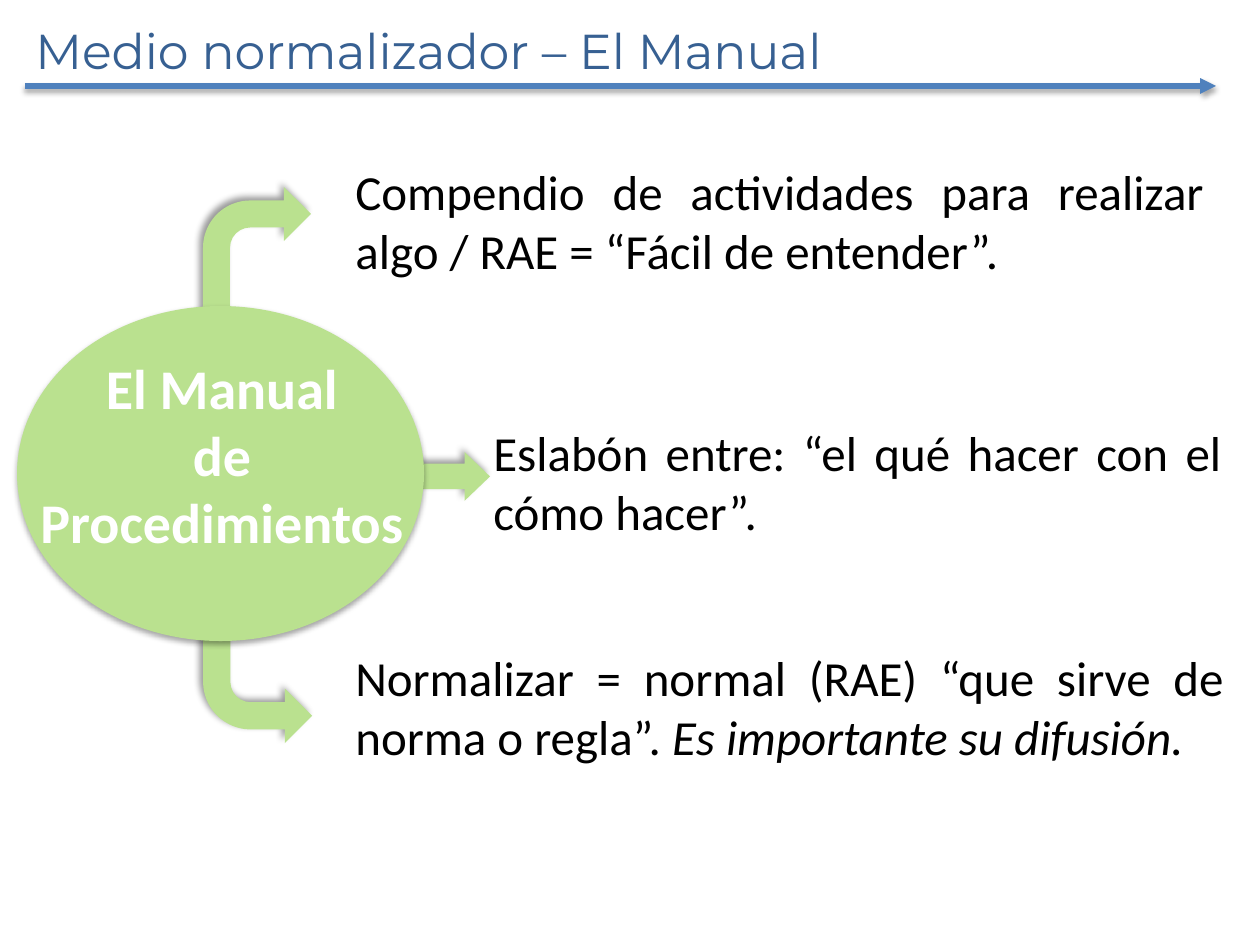
from dataclasses import dataclass

from lxml import etree
from pptx import Presentation
from pptx import util as u
from pptx.dml.color import RGBColor
from pptx.enum import shapes, text
from pptx.oxml import ns

SCALE = 914400 / 126


@dataclass(frozen=True)
class Theme:
    """Colours, fonts, type sizes and shadows of the slide."""
    green: str = "BAE18F"
    blue: str = "4F81BD"
    navy: str = "376092"
    black: str = "000000"
    white: str = "FFFFFF"
    body_font: str = "Calibri"
    title_font: str = "Montserrat"
    body_size: int = 28
    hub_size: int = 32
    arrow_shadow: tuple = (40, 4, 3, 225)
    soft_shadow: tuple = (35, 3.1, 1.8, 90)


THEME = Theme()


def px(n):
    """Turn pixels into EMU."""
    return u.Emu(round(n * SCALE))


def rgb(colour):
    """Turn a hex string into a colour."""
    return RGBColor.from_string(colour)


def add_sub(parent, tag, **attrs):
    """Append a DrawingML element with attributes."""
    values = {name: str(value) for name, value in attrs.items()}
    return etree.SubElement(parent, ns.qn(tag), values)


def set_shadow(sp, shadow):
    """Give a shape an outer shadow of opacity, blur, distance and angle."""
    opacity, blur, dist, angle = shadow
    effects = add_sub(sp._element.spPr, "a:effectLst")
    outer = add_sub(effects, "a:outerShdw", blurRad=u.Pt(blur), dist=u.Pt(dist),
                    dir=angle * 60000, rotWithShape=0)
    colour = add_sub(outer, "a:srgbClr", val=THEME.black)
    add_sub(colour, "a:alpha", val=opacity * 1000)


def add_green_shape(s, kind, box, shadow):
    """Add a borderless green shape with a shadow."""
    sp = s.shapes.add_shape(kind, *map(px, box))
    sp.fill.solid()
    sp.fill.fore_color.rgb = rgb(THEME.green)
    sp.line.fill.background()
    set_shadow(sp, shadow)
    return sp


def add_bent_arrow(s, box, adjustments=(), downward=False):
    """Add a bent arrow that leaves the hub to the right."""
    sp = add_green_shape(s, shapes.MSO_SHAPE.BENT_ARROW, box, THEME.arrow_shadow)
    for i, value in enumerate(adjustments):
        sp.adjustments[i] = value
    if downward:
        sp.rotation = 180
        sp._element.spPr.xfrm.set("flipH", "1")


def add_text(s, box, paragraphs, size=THEME.body_size, colour=THEME.black,
             font=THEME.body_font, align=text.PP_ALIGN.JUSTIFY, bold=False):
    """Add a wrapping text box; each paragraph is a list of (words, italic) runs."""
    tf = s.shapes.add_textbox(*map(px, box)).text_frame
    tf.word_wrap = True
    for i, runs in enumerate(paragraphs):
        p = tf.add_paragraph() if i else tf.paragraphs[0]
        p.alignment = align
        p.font.size = u.Pt(size)
        p.font.name = font
        p.font.bold = bold
        p.font.color.rgb = rgb(colour)
        for words, italic in runs:
            r = p.add_run()
            r.text = words
            if italic:
                r.font.italic = True


def add_title_rule(s, left, right, y):
    """Add the arrow line under the title."""
    line = s.shapes.add_connector(shapes.MSO_CONNECTOR.STRAIGHT,
                                  px(left), px(y), px(right), px(y))
    line.line.color.rgb = rgb(THEME.blue)
    line.line.width = u.Pt(3)
    add_sub(line.line._get_or_add_ln(), "a:tailEnd", type="triangle")
    set_shadow(line, THEME.soft_shadow)


def main():
    """Build the slide and save it."""
    prs = Presentation()
    prs.slide_width, prs.slide_height = px(1260), px(945)
    s = prs.slides.add_slide(prs.slide_layouts[6])

    add_bent_arrow(s, (372, 452, 118, 102), (0.25, 0.24, 0.25, 0.44))
    add_bent_arrow(s, (203, 187, 108, 151))
    add_bent_arrow(s, (203, 592, 109, 151), downward=True)

    add_green_shape(s, shapes.MSO_SHAPE.OVAL, (17, 306, 407, 335), THEME.soft_shadow)
    add_text(s, (25, 347, 394, 217),
             [[("El Manual", False)], [("de Procedimientos", False)]],
             size=THEME.hub_size, colour=THEME.white,
             align=text.PP_ALIGN.CENTER, bold=True)

    ideas = [
        ((481, 416, 753, 131),
         [("Eslabón entre: “el qué hacer con el cómo hacer”.", False)]),
        ((343, 155, 873, 131),
         [("Compendio de actividades para realizar algo / RAE = “Fácil de entender”.", False)]),
        ((343, 641, 893, 131),
         [("Normalizar = normal (RAE) “que sirve de norma o regla”. ", False),
          ("Es importante su difusión.", True)]),
    ]
    for box, runs in ideas:
        add_text(s, box, [runs])

    add_title_rule(s, 25, 1216, 86)
    add_text(s, (23, 14, 1004, 72), [[("Medio normalizador – El Manual", False)]],
             colour=THEME.navy, font=THEME.title_font, align=text.PP_ALIGN.LEFT)
    prs.save("out.pptx")


if __name__ == "__main__":
    main()
